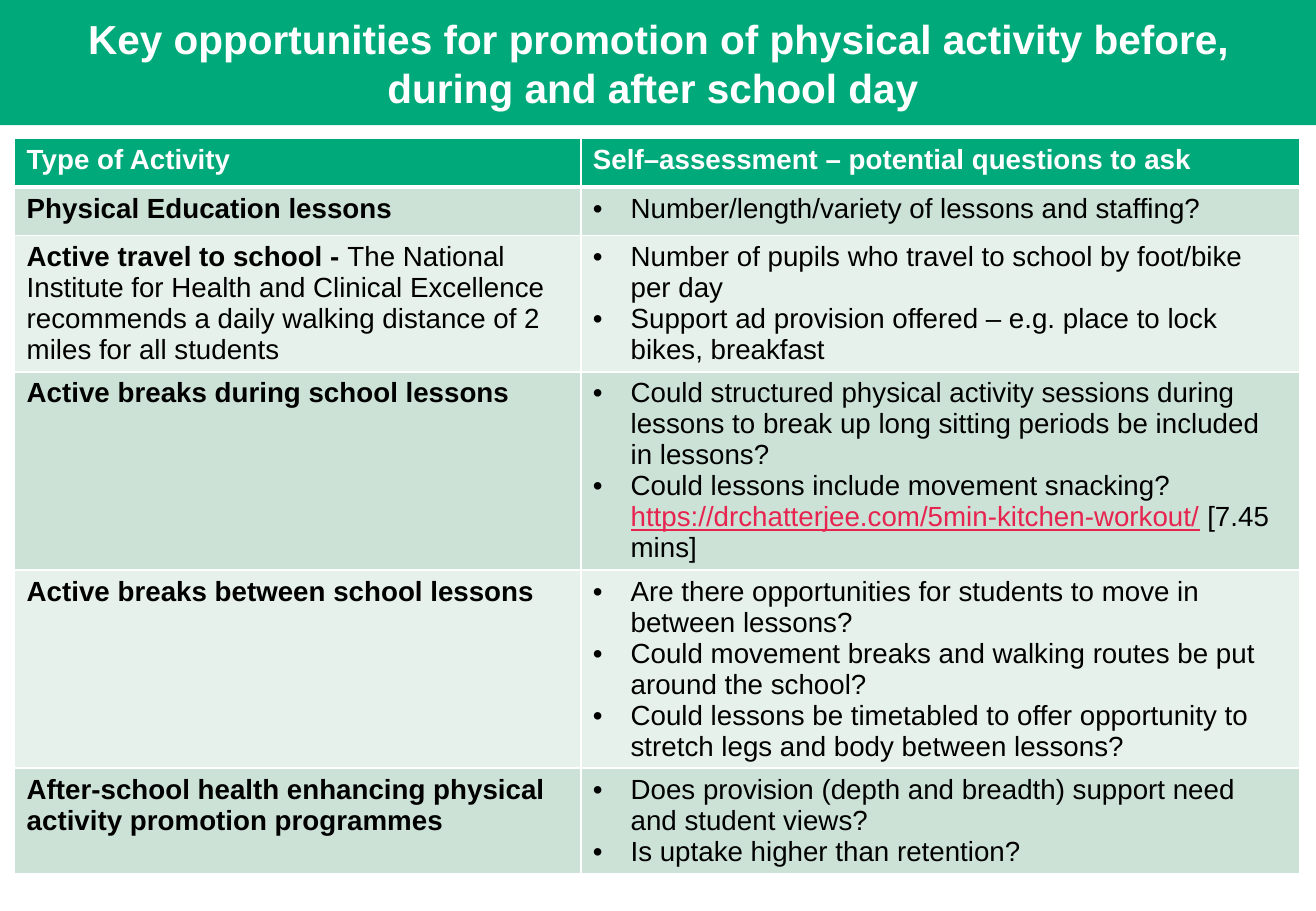
from lxml import etree
from pptx import Presentation
from pptx.dml.color import RGBColor
from pptx.enum.shapes import MSO_SHAPE
from pptx.enum.text import MSO_ANCHOR, MSO_AUTO_SIZE, PP_ALIGN
from pptx.oxml.ns import qn
from pptx.util import Pt

RECTANGLE = MSO_SHAPE.RECTANGLE
MIDDLE = MSO_ANCHOR.MIDDLE
NO_AUTOFIT = MSO_AUTO_SIZE.NONE
CENTER = PP_ALIGN.CENTER

PX = 9144
TITLE_ONLY = 5
GREEN, PALE, PALER = "00A97A", "CCE2D7", "E7F1EC"
WHITE, BLACK, PINK = "FFFFFF", "000000", "E6244F"

TITLE = ("Key opportunities for promotion of physical activity before, "
         "during and after school day ")
HEADERS = ["Type of Activity", "Self–assessment – potential questions to ask"]
COLUMN_WIDTHS = [466, 592]
ROW_HEIGHTS = [40, 40, 94, 108, 157, 84]
ACTIVITIES = [
    ("Physical Education lessons", "",
     [["Number/length/variety of lessons and staffing?"]]),
    ("Active travel to school - ",
     "The National Institute for Health and Clinical Excellence recommends "
     "a daily walking distance of 2 miles for all students",
     [["Number of pupils who travel to school by foot/bike per day"],
      ["Support ad provision offered – e.g. place to lock bikes, breakfast"]]),
    ("Active breaks during school lessons", "",
     [["Could structured physical activity sessions during lessons to break up "
       "long sitting periods be included in lessons?"],
      ["Could lessons include movement snacking? ",
       "https://drchatterjee.com/5min-kitchen-workout/", " [7.45 mins]"]]),
    ("Active breaks between school lessons", "",
     [["Are there opportunities for students to move in between lessons?"],
      ["Could movement breaks and walking routes be put around the school?"],
      ["Could lessons be timetabled to offer opportunity to stretch legs and "
       "body between lessons?"]]),
    ("After-school health enhancing physical activity promotion programmes", "",
     [["Does provision (depth and breadth) support need and student views?"],
      ["Is uptake higher than retention?"]]),
]


def px(length):
    """Turn whole pixels into EMU."""
    return length * PX


def rgb(value):
    """Turn a hex string into a colour."""
    return RGBColor.from_string(value)


def add_text(paragraph, text, size=16.4, color=BLACK, bold=False, underline=False):
    """Add one formatted run to a paragraph."""
    run = paragraph.add_run()
    run.text = text
    font = run.font
    font.name, font.size = "Arial", Pt(size)
    font.bold, font.underline = bold, underline
    font.color.rgb = rgb(color)


def add_bullet(paragraph):
    """Give a paragraph a hanging round bullet."""
    properties = paragraph._p.get_or_add_pPr()
    properties.set("marL", str(px(31)))
    properties.set("indent", str(-px(31)))
    etree.SubElement(properties, qn("a:buFont")).set("typeface", "Arial")
    etree.SubElement(properties, qn("a:buChar")).set("char", "•")


def format_cell(cell, fill, top=1, bottom=1):
    """Set the white borders and the fill of a cell."""
    properties = cell._tc.get_or_add_tcPr()
    for side, width in (("L", 1), ("R", 1), ("T", top), ("B", bottom)):
        line = etree.SubElement(properties, qn(f"a:ln{side}"), w=str(Pt(width)))
        solid = etree.SubElement(line, qn("a:solidFill"))
        etree.SubElement(solid, qn("a:srgbClr")).set("val", WHITE)
    cell.fill.solid()
    cell.fill.fore_color.rgb = rgb(fill)


def add_title(slide):
    """Place the title on a green band."""
    title = slide.shapes.title
    title.left, title.top, title.width, title.height = map(px, (45, 12, 994, 79))
    frame = title.text_frame
    frame.margin_left = frame.margin_right = frame.margin_top = frame.margin_bottom = 0
    frame.word_wrap, frame.auto_size = True, NO_AUTOFIT
    frame.vertical_anchor = MIDDLE
    paragraph = frame.paragraphs[0]
    paragraph.alignment = CENTER
    add_text(paragraph, TITLE, size=24, color=WHITE, bold=True)

    band = slide.shapes.add_shape(RECTANGLE, 0, 0, px(1083), px(103))
    band.shadow.inherit = False
    band.fill.solid()
    band.fill.fore_color.rgb = rgb(GREEN)
    band.line.fill.background()
    title.element.addprevious(band.element)


def fill_questions(cell, questions):
    """Write the bulleted questions of one activity."""
    frame = cell.text_frame
    for index, parts in enumerate(questions):
        paragraph = frame.add_paragraph() if index else frame.paragraphs[0]
        add_bullet(paragraph)
        for part in parts:
            is_address = part.startswith("https:")
            add_text(paragraph, part, color=PINK if is_address else BLACK,
                     underline=is_address)


def add_activity_table(slide):
    """Add the table of activities and questions."""
    table = slide.shapes.add_table(
        len(ROW_HEIGHTS), len(COLUMN_WIDTHS), px(12), px(114),
        px(sum(COLUMN_WIDTHS)), px(sum(ROW_HEIGHTS))).table
    for column, width in zip(table.columns, COLUMN_WIDTHS):
        column.width = px(width)
    for row, height in zip(table.rows, ROW_HEIGHTS):
        row.height = px(height)
    for column, header in enumerate(HEADERS):
        cell = table.cell(0, column)
        format_cell(cell, GREEN, bottom=3)
        add_text(cell.text_frame.paragraphs[0], header, color=WHITE, bold=True)
    for row, (activity, detail, questions) in enumerate(ACTIVITIES, start=1):
        for cell in table.rows[row].cells:
            format_cell(cell, PALE if row % 2 else PALER, top=3 if row == 1 else 1)
        paragraph = table.cell(row, 0).text_frame.paragraphs[0]
        add_text(paragraph, activity, bold=True)
        if detail:
            add_text(paragraph, detail)
        fill_questions(table.cell(row, 1), questions)


def main():
    """Build and save the slide."""
    presentation = Presentation()
    presentation.slide_width, presentation.slide_height = px(1083), px(750)
    slide = presentation.slides.add_slide(presentation.slide_layouts[TITLE_ONLY])
    add_title(slide)
    add_activity_table(slide)
    presentation.save("out.pptx")


if __name__ == "__main__":
    main()
